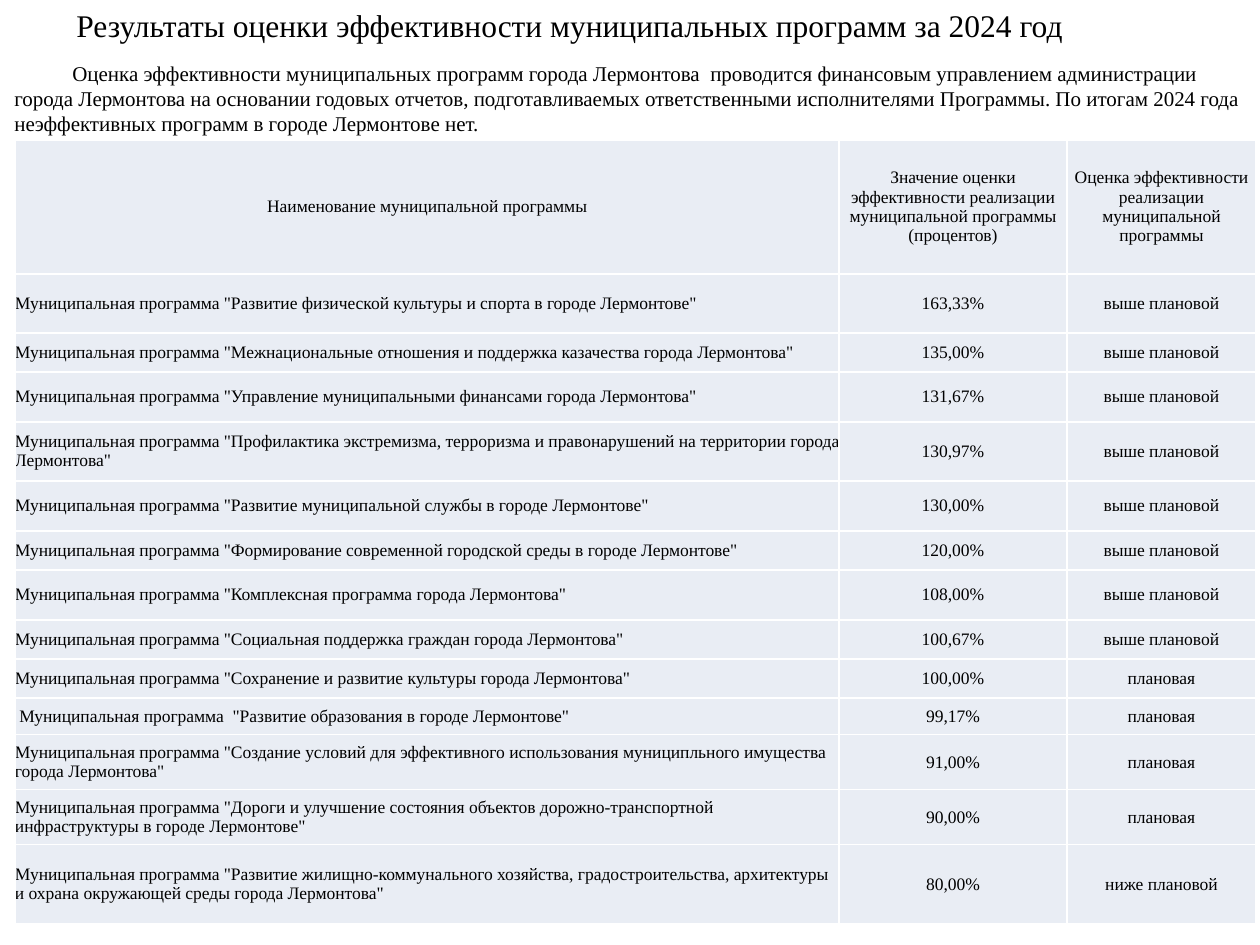
import pptx
import pptx.dml.color
import pptx.enum.text
import pptx.oxml
import pptx.oxml.ns
import pptx.util
from dataclasses import dataclass

PX = 914400 // 126  # EMU in one px


@dataclass(frozen=True)
class Theme:
    font: str = "Times New Roman"
    title_size: int = 18
    intro_size: int = 12
    table_size: int = 10
    text: str = "000000"
    cell: str = "E9EDF4"
    border: str = "FFFFFF"


THEME = Theme()
ALIGN = pptx.enum.text.PP_ALIGN

TITLE = "Результаты оценки эффективности муниципальных программ за 2024 год"
INTRO = (
    "Оценка эффективности муниципальных программ города Лермонтова  проводится "
    "финансовым управлением администрации города Лермонтова на основании годовых "
    "отчетов, подготавливаемых ответственными исполнителями Программы. По итогам "
    "2024 года неэффективных программ в городе Лермонтове нет."
)
HEADER = (
    "Наименование муниципальной программы",
    "Значение оценки эффективности реализации муниципальной программы (процентов)",
    "Оценка эффективности реализации муниципальной программы",
)
PREFIX = "Муниципальная программа "
ABOVE, PLANNED, BELOW = "выше плановой", "плановая", "ниже плановой"
COLUMN_WIDTHS = (824, 228, 189)
HEADER_HEIGHT = 134
# row height, programme name, score, rating
PROGRAMMES = (
    (59, PREFIX + '"Развитие физической культуры и спорта в городе Лермонтове"', "163,33%", ABOVE),
    (39, PREFIX + '"Межнациональные отношения и поддержка казачества города Лермонтова"', "135,00%", ABOVE),
    (50, PREFIX + '"Управление муниципальными финансами города Лермонтова"', "131,67%", ABOVE),
    (59, PREFIX + '"Профилактика экстремизма, терроризма и правонарушений на территории '
                  'города Лермонтова"', "130,97%", ABOVE),
    (50, PREFIX + '"Развитие муниципальной службы в городе Лермонтове"', "130,00%", ABOVE),
    (39, PREFIX + '"Формирование современной городской среды в городе Лермонтове"', "120,00%", ABOVE),
    (50, PREFIX + '"Комплексная программа города Лермонтова"', "108,00%", ABOVE),
    (39, PREFIX + '"Социальная поддержка граждан города Лермонтова"', "100,67%", ABOVE),
    (39, PREFIX + '"Сохранение и развитие культуры города Лермонтова"', "100,00%", PLANNED),
    (37, " " + PREFIX + ' "Развитие образования в городе Лермонтове"', "99,17%", PLANNED),
    (55, PREFIX + '"Создание условий для эффективного использования муниципльного имущества '
                  'города Лермонтова"', "91,00%", PLANNED),
    (55, PREFIX + '"Дороги и улучшение состояния объектов дорожно-транспортной '
                  'инфраструктуры в городе Лермонтове"', "90,00%", PLANNED),
    (79, PREFIX + '"Развитие жилищно-коммунального хозяйства, градостроительства, архитектуры '
                  'и охрана окружающей среды города Лермонтова"', "80,00%", BELOW),
)


def rgb(value):
    return pptx.dml.color.RGBColor.from_string(value)


def write(tf, text, size, align=ALIGN.LEFT):
    tf.text = text
    p = tf.paragraphs[0]
    p.alignment = align
    for r in p.runs:
        r.font.name = THEME.font
        r.font.size = pptx.util.Pt(size)
        r.font.color.rgb = rgb(THEME.text)
    return p


def add_text(s, box, text, size, indent=0):
    """Text box whose first line is indented by the given px."""
    tf = s.shapes.add_textbox(*(v * PX for v in box)).text_frame
    tf.word_wrap = True
    tf.auto_size = pptx.enum.text.MSO_AUTO_SIZE.SHAPE_TO_FIT_TEXT
    p = write(tf, text, size)
    if indent:
        p._p.get_or_add_pPr().set("indent", str(indent * PX))


def style_cell(cell):
    cell.margin_left = cell.margin_right = cell.margin_top = cell.margin_bottom = 0
    cell.vertical_anchor = pptx.enum.text.MSO_ANCHOR.MIDDLE
    tc_pr = cell._tc.get_or_add_tcPr()
    for side in ("lnL", "lnR", "lnT", "lnB"):
        tc_pr.append(pptx.oxml.parse_xml(
            f'<a:{side} {pptx.oxml.ns.nsdecls("a")} w="{pptx.util.Pt(1)}"><a:solidFill>'
            f'<a:srgbClr val="{THEME.border}"/></a:solidFill></a:{side}>'))
    cell.fill.solid()
    cell.fill.fore_color.rgb = rgb(THEME.cell)


def add_programme_table(s, left, top):
    heights = [HEADER_HEIGHT] + [row[0] for row in PROGRAMMES]
    rows = [HEADER] + [row[1:] for row in PROGRAMMES]
    table = s.shapes.add_table(
        len(rows), len(HEADER), left * PX, top * PX,
        sum(COLUMN_WIDTHS) * PX, sum(heights) * PX).table
    table.horz_banding = False
    table.first_row = False
    for column, width in zip(table.columns, COLUMN_WIDTHS):
        column.width = width * PX
    for i, (height, texts) in enumerate(zip(heights, rows)):
        table.rows[i].height = height * PX
        for j, text in enumerate(texts):
            cell = table.cell(i, j)
            style_cell(cell)
            align = ALIGN.LEFT if i and j == 0 else ALIGN.CENTER
            write(cell.text_frame, text, THEME.table_size, align)


def main():
    prs = pptx.Presentation()
    prs.slide_width, prs.slide_height = 1260 * PX, 945 * PX
    s = prs.slides.add_slide(prs.slide_layouts[6])
    add_text(s, (64, 0, 1111, 51), TITLE, THEME.title_size)
    add_text(s, (2, 54, 1253, 89), INTRO, THEME.intro_size, indent=58)
    add_programme_table(s, 15, 140)
    prs.save("out.pptx")


if __name__ == "__main__":
    main()
